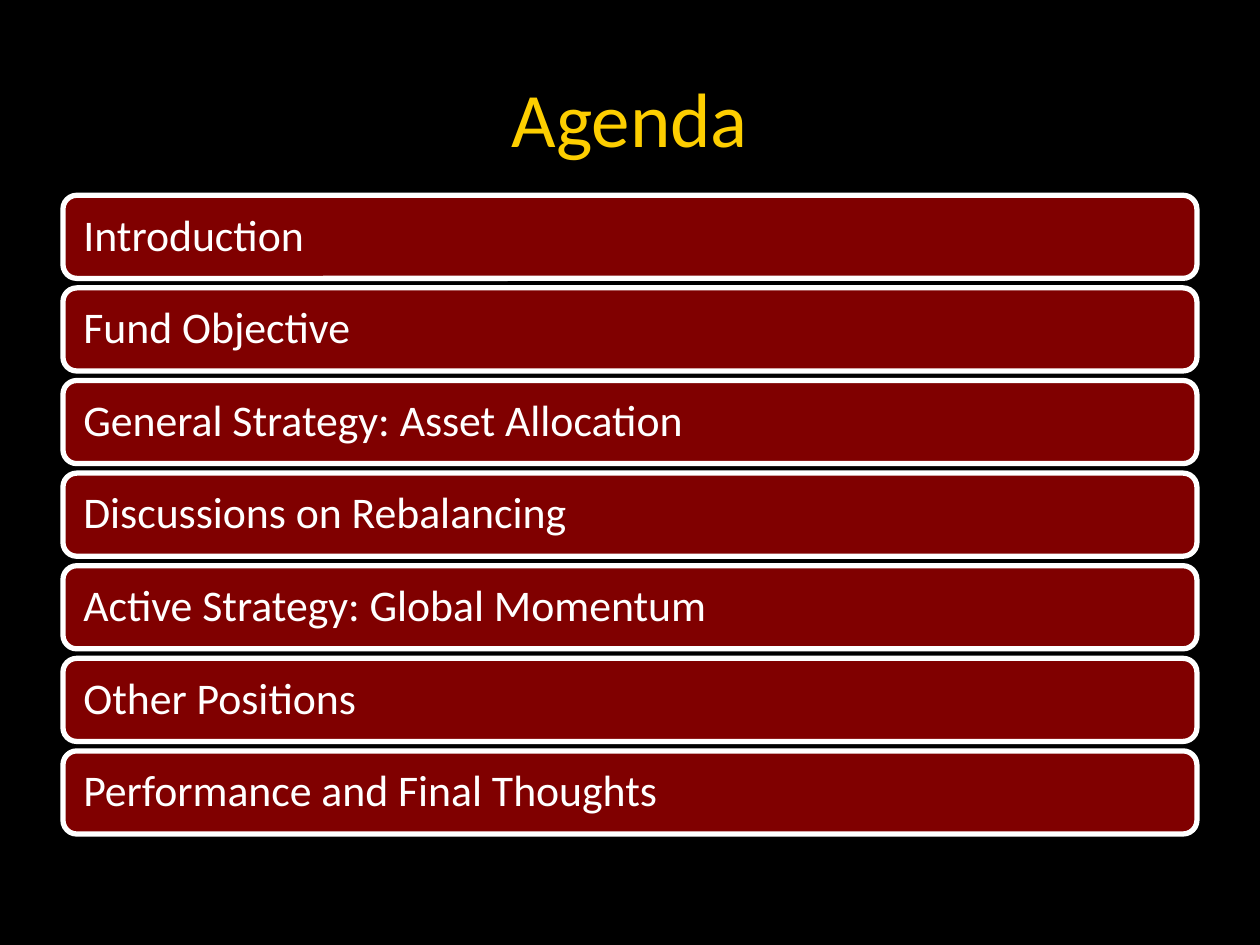
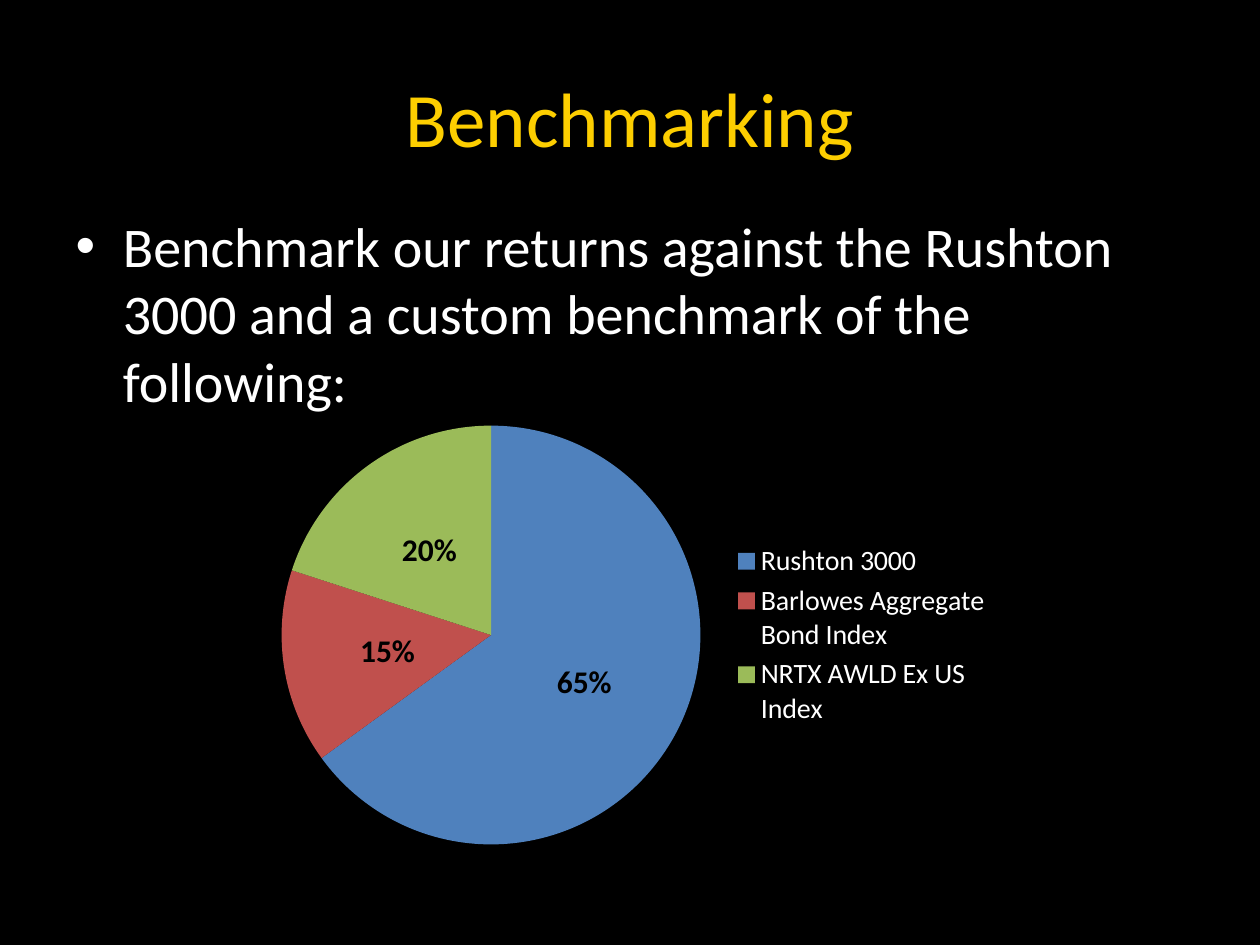
from dataclasses import dataclass

from pptx import Presentation
from pptx.chart.data import CategoryChartData
from pptx.dml.color import RGBColor
from pptx.enum.chart import XL_CHART_TYPE, XL_LABEL_POSITION, XL_LEGEND_POSITION
from pptx.enum.shapes import MSO_SHAPE
from pptx.enum.text import MSO_ANCHOR, MSO_AUTO_SIZE, PP_ALIGN
from pptx.util import Inches, Pt

PIE = XL_CHART_TYPE.PIE
MID_LABEL = XL_LABEL_POSITION.CENTER
RIGHT = XL_LEGEND_POSITION.RIGHT
ROUND = MSO_SHAPE.ROUNDED_RECTANGLE
TOP, MIDDLE = MSO_ANCHOR.TOP, MSO_ANCHOR.MIDDLE
LEFT, CENTER = PP_ALIGN.LEFT, PP_ALIGN.CENTER
TITLE_ONLY, TITLE_BODY = 5, 1

AGENDA = [
    "Introduction",
    "Fund Objective",
    "General Strategy: Asset Allocation",
    "Discussions on Rebalancing",
    "Active Strategy: Global Momentum",
    "Other Positions",
    "Performance and Final Thoughts",
]
BENCH = ("Benchmark our returns against the Rushton 3000 "
         "and a custom benchmark of the following:")
MIX = [
    ("Rushton 3000", 65, "4F81BD"),
    ("Barlowes Aggregate Bond Index", 15, "C0504D"),
    ("NRTX AWLD Ex US Index", 20, "9BBB59"),
]


@dataclass(frozen=True)
class Theme:
    font: str = "Calibri"
    back: str = "000000"
    gold: str = "FDCE00"
    white: str = "FFFFFF"
    bar: str = "800000"
    label: str = "000000"
    title: int = 44
    body: int = 32
    item: int = 25
    value: int = 18
    key: int = 16


T = Theme()
WIDE, HIGH = 10, 7.5
EDGE = WIDE / 20
SPAN = WIDE - 2 * EDGE
TITLE_BOX = (EDGE, 0.3, SPAN, 1.25)
BODY_BOX = (EDGE, 1.63, SPAN, 4.95)
PIE_BOX = (2.01, 3.24, 5.96, 3.6)
BAR_TOP, BAR_HIGH, BAR_STEP = 1.55, 0.66, 0.735
BAR_PAD = 0.13


def rgb(code):
    return RGBColor.from_string(code)


def style(font, size, color, bold=False):
    font.name, font.size, font.bold = T.font, Pt(size), bold
    font.color.rgb = rgb(color)


def place(shape, box):
    shape.left, shape.top, shape.width, shape.height = map(Inches, box)


def write(shape, text, size, color=T.white, align=LEFT, anchor=MIDDLE,
          pad=None, lead=None):
    frame = shape.text_frame
    frame.word_wrap = True
    frame.auto_size = MSO_AUTO_SIZE.NONE
    frame.vertical_anchor = anchor
    if pad is not None:
        frame.margin_left = frame.margin_right = Inches(pad)
    para = frame.paragraphs[0]
    para.alignment = align
    if lead:
        para.line_spacing = lead
    run = para.add_run()
    run.text = text
    style(run.font, size, color)


def add_slide(prs, layout, title):
    slide = prs.slides.add_slide(prs.slide_layouts[layout])
    place(slide.shapes.title, TITLE_BOX)
    write(slide.shapes.title, title, T.title, T.gold, CENTER)
    return slide


def add_bars(slide, items):
    for row, text in enumerate(items):
        box = (EDGE, BAR_TOP + row * BAR_STEP, SPAN, BAR_HIGH)
        bar = slide.shapes.add_shape(ROUND, *map(Inches, box))
        bar.shadow.inherit = False
        bar.fill.solid()
        bar.fill.fore_color.rgb = rgb(T.bar)
        bar.line.color.rgb = rgb(T.white)
        bar.line.width = Pt(3)
        write(bar, text, T.item, pad=BAR_PAD, lead=0.9)


def add_pie(slide, parts):
    names, shares, colors = zip(*parts)
    data = CategoryChartData()
    data.categories = names
    data.add_series("Series 1", shares)
    chart = slide.shapes.add_chart(PIE, *map(Inches, PIE_BOX), data).chart
    chart.has_title = False
    style(chart.font, T.key, T.white)

    chart.has_legend = True
    chart.legend.position = RIGHT
    chart.legend.include_in_layout = False
    style(chart.legend.font, T.key, T.white)

    plot = chart.plots[0]
    plot.vary_by_categories = True
    for spot, color in enumerate(colors):
        fill = plot.series[0].points[spot].format.fill
        fill.solid()
        fill.fore_color.rgb = rgb(color)

    plot.has_data_labels = True
    labels = plot.data_labels
    labels.show_percentage, labels.show_value = True, False
    labels.number_format, labels.number_format_is_linked = "0%", False
    labels.position = MID_LABEL
    style(labels.font, T.value, T.label, bold=True)


def main():
    prs = Presentation()
    prs.slide_width, prs.slide_height = Inches(WIDE), Inches(HIGH)
    back = prs.slide_master.background.fill
    back.solid()
    back.fore_color.rgb = rgb(T.back)

    add_bars(add_slide(prs, TITLE_ONLY, "Agenda"), AGENDA)

    slide = add_slide(prs, TITLE_BODY, "Benchmarking")
    body = slide.placeholders[1]
    place(body, BODY_BOX)
    write(body, BENCH, T.body, anchor=TOP)
    add_pie(slide, MIX)

    prs.save("out.pptx")


if __name__ == "__main__":
    main()
